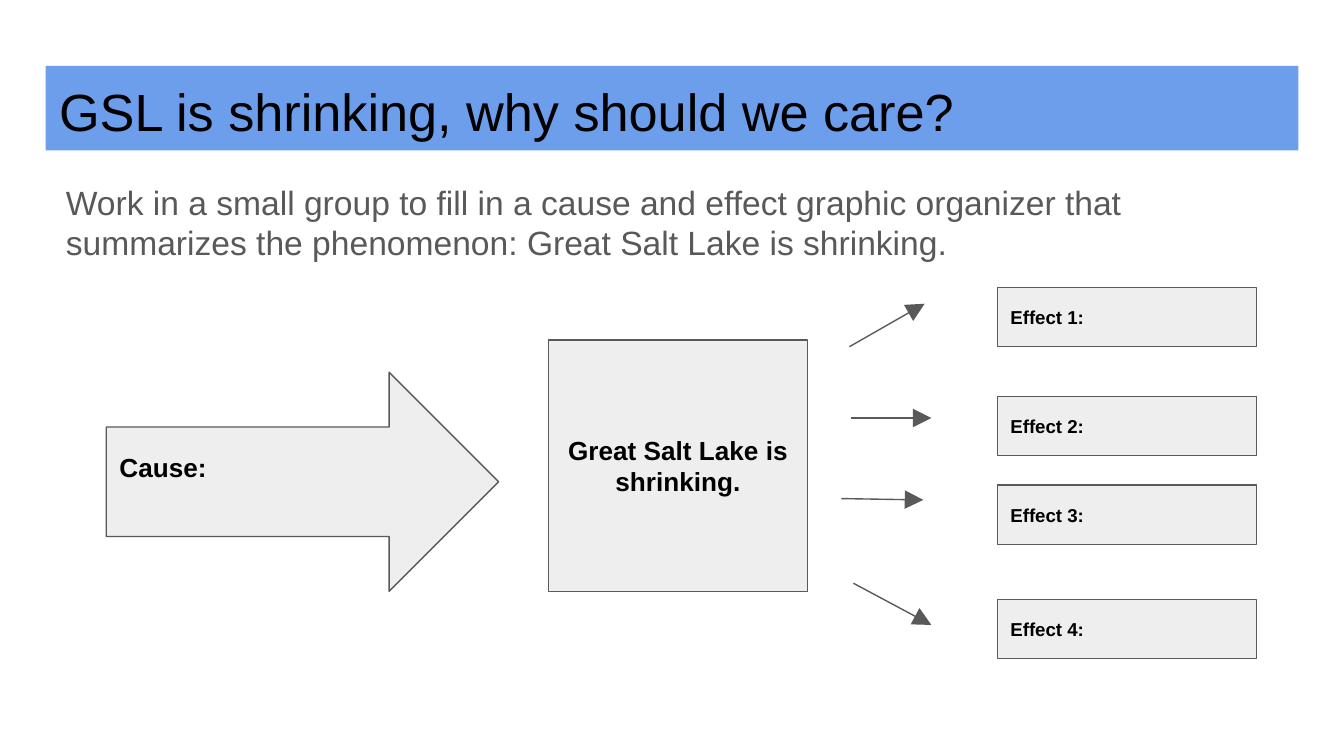
from lxml.etree import SubElement
from pptx import Presentation
from pptx.dml.color import RGBColor
from pptx.enum.shapes import MSO_CONNECTOR, MSO_SHAPE
from pptx.enum.text import MSO_ANCHOR, PP_ALIGN
from pptx.oxml.ns import qn
from pptx.util import Inches, Pt

COLORS = {"banner": "6D9EEB", "box": "EEEEEE", "outline": "595959",
          "body": "595959", "text": "000000"}
FONT = "Arial"
INSET = 0.1

TITLE = "GSL is shrinking, why should we care?"
TASK = ("Work in a small group to fill in a cause and effect graphic organizer "
        "that summarizes the phenomenon: Great Salt Lake is shrinking.")
CAUSE = "Cause:"
PHENOMENON = "Great Salt Lake is shrinking."

# Effect label, top of its box, arrow start and arrow end
EFFECTS = [
    ("Effect 1:", 2.14, (6.32, 2.58), (6.88, 2.26)),
    ("Effect 2:", 2.95, (6.33, 3.11), (6.93, 3.11)),
    ("Effect 3:", 3.61, (6.26, 3.71), (6.87, 3.72)),
    ("Effect 4:", 4.46, (6.35, 4.34), (6.93, 4.65)),
]
BOX_WIDTH = 1.93
EFFECT_LEFT, EFFECT_HEIGHT = 7.42, 0.44


def rgb(name):
    return RGBColor.from_string(COLORS[name])


def place(shape, left, top, width, height):
    shape.left, shape.top = Inches(left), Inches(top)
    shape.width, shape.height = Inches(width), Inches(height)


def write(shape, text, size, color="text", bold=False, align=PP_ALIGN.LEFT,
          anchor=MSO_ANCHOR.MIDDLE, inset_bottom=INSET):
    frame = shape.text_frame
    frame.word_wrap = True
    frame.vertical_anchor = anchor
    frame.margin_left = frame.margin_right = frame.margin_top = Inches(INSET)
    frame.margin_bottom = Inches(inset_bottom)
    paragraph = frame.paragraphs[0]
    paragraph.alignment = align
    paragraph.space_before = Pt(0)
    run = paragraph.add_run()
    run.text = text
    run.font.name, run.font.size, run.font.bold = FONT, Pt(size), bold
    run.font.color.rgb = rgb(color)
    return paragraph


def add_box(slide, kind, bounds, text, size, **text_options):
    shape = slide.shapes.add_shape(kind, *map(Inches, bounds))
    shape.shadow.inherit = False
    shape.fill.solid()
    shape.fill.fore_color.rgb = rgb("box")
    shape.line.color.rgb = rgb("outline")
    shape.line.width = Pt(0.75)
    write(shape, text, size, bold=True, **text_options)


def add_arrow(slide, start, end):
    arrow = slide.shapes.add_connector(
        MSO_CONNECTOR.STRAIGHT, *map(Inches, start + end))
    arrow.line.color.rgb = rgb("outline")
    arrow.line.width = Pt(0.75)
    line = arrow._element.spPr.find(qn("a:ln"))
    SubElement(line, qn("a:tailEnd"), type="triangle", w="lg", len="lg")
    SubElement(arrow._element.spPr, qn("a:effectLst"))


def main():
    presentation = Presentation()
    presentation.slide_width = Inches(10)
    presentation.slide_height = presentation.slide_width * 9 // 16
    slide = presentation.slides.add_slide(presentation.slide_layouts[1])

    title, body = slide.placeholders
    place(title, 0.34, 0.49, 9.32, 0.63)
    title.fill.solid()
    title.fill.fore_color.rgb = rgb("banner")
    write(title, TITLE, 28, anchor=MSO_ANCHOR.TOP, inset_bottom=0.05)

    place(body, 0.39, 1.25, 9.32, 3.74)
    paragraph = write(body, TASK, 18, color="body", anchor=MSO_ANCHOR.TOP)
    properties = paragraph._p.get_or_add_pPr()
    properties.set("marL", "0")
    properties.set("indent", "0")
    SubElement(properties, qn("a:buNone"))

    add_box(slide, MSO_SHAPE.RECTANGLE, (4.08, 2.53, BOX_WIDTH, 1.87),
            PHENOMENON, 14, align=PP_ALIGN.CENTER)
    add_box(slide, MSO_SHAPE.RIGHT_ARROW, (0.79, 2.77, 2.92, 1.63),
            CAUSE, 14, inset_bottom=0.32)

    for label, top, start, end in EFFECTS:
        add_arrow(slide, start, end)
        add_box(slide, MSO_SHAPE.RECTANGLE,
                (EFFECT_LEFT, top, BOX_WIDTH, EFFECT_HEIGHT), label, 10)

    presentation.save("out.pptx")


if __name__ == "__main__":
    main()
